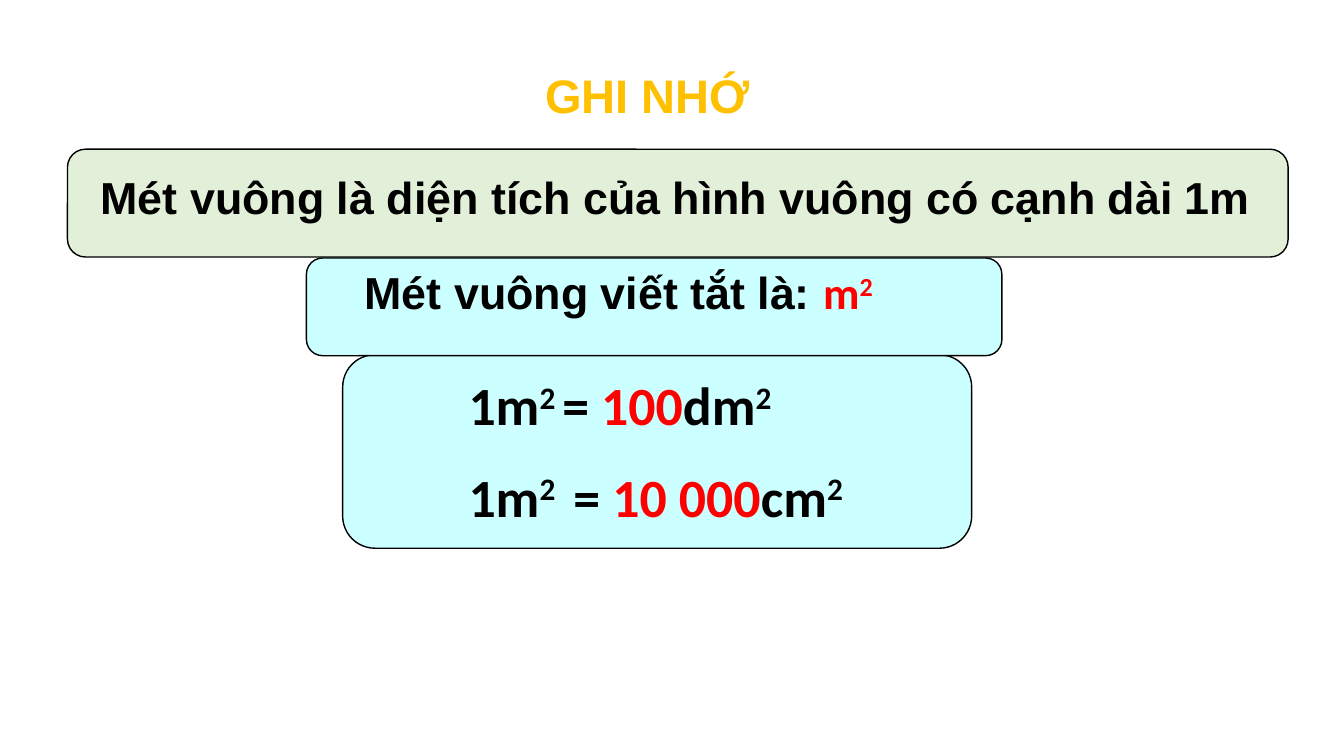
from pptx import Presentation
from pptx.dml.color import RGBColor
from pptx.enum.shapes import MSO_SHAPE
from pptx.util import Pt

ROUNDED = MSO_SHAPE.ROUNDED_RECTANGLE
COLORS = {"black": "000000", "red": "FF0000", "gold": "FFC000",
          "green": "E2F0D9", "cyan": "CCFFFF"}
SUPERSCRIPT = "30000"

# Panels: left, top, width, height, fill
PANELS = [
    (244.8, 253.4, 449.3, 138.2, "cyan"),
    (48.2, 106.6, 871.9, 77, "green"),
    (218.9, 184.3, 496.8, 69.8, "cyan"),
]

# Run styles: font, size, colour, superscript
STYLES = {
    "title": ("Arial", 33.6, "gold", False),
    "body": ("Arial", 32, "black", False),
    "unit": ("Calibri", 32, "red", False),
    "unit_sup": ("Calibri", 32, "red", True),
    "eq": ("Calibri", 38.4, "black", False),
    "eq_sup": ("Calibri", 38.4, "black", True),
    "eq_value": ("Calibri", 38.4, "red", False),
    "eq_gap": ("Calibri", 57.6, "black", False),
}

# Texts: left, top, width, height, paragraphs of (text, style) runs
TEXTS = [
    (382.3, 44, 220.3, 48.2, [[("GHI NHỚ", "title")]]),
    (64.8, 117.4, 884.2, 46.1,
     [[("Mét vuông là diện tích của hình vuông có cạnh dài 1m", "body")]]),
    (253.4, 185.8, 505.4, 90,
     [[("Mét vuông viết tắt là: ", "body"), ("m", "unit"), ("2", "unit_sup")]]),
    (327.6, 262.1, 414.7, 236.9, [
        [("1m", "eq"), ("2 ", "eq_sup"), ("= ", "eq"), ("100", "eq_value"),
         ("dm", "eq"), ("2", "eq_sup")],
        [("1m", "eq"), ("2", "eq_sup"), (" ", "eq_gap"), ("= ", "eq"),
         ("10 000", "eq_value"), ("cm", "eq"), ("2", "eq_sup")],
    ]),
]


def rgb(name):
    return RGBColor.from_string(COLORS[name])


def add_panel(s, *box, fill):
    sp = s.shapes.add_shape(ROUNDED, *map(Pt, box))
    sp.shadow.inherit = False
    sp.fill.solid()
    sp.fill.fore_color.rgb = rgb(fill)
    sp.line.color.rgb = rgb("black")
    sp.line.width = Pt(1)


def add_run(p, text, style):
    font, size, color, raised = STYLES[style]
    r = p.add_run()
    r.text = text
    r.font.name = font
    r.font.size = Pt(size)
    r.font.bold = True
    r.font.color.rgb = rgb(color)
    if raised:
        r._r.get_or_add_rPr().set("baseline", SUPERSCRIPT)


def add_text(s, *box, paragraphs):
    tf = s.shapes.add_textbox(*map(Pt, box)).text_frame
    tf.word_wrap = True
    for i, runs in enumerate(paragraphs):
        p = tf.add_paragraph() if i else tf.paragraphs[0]
        for text, style in runs:
            add_run(p, text, style)


def main():
    prs = Presentation()
    prs.slide_width, prs.slide_height = Pt(960), Pt(540)
    s = prs.slides.add_slide(prs.slide_layouts[6])

    # Rounded panels
    for *box, fill in PANELS:
        add_panel(s, *box, fill=fill)

    # Title, definition, abbreviation and conversions
    for *box, paragraphs in TEXTS:
        add_text(s, *box, paragraphs=paragraphs)

    prs.save("out.pptx")


if __name__ == "__main__":
    main()
